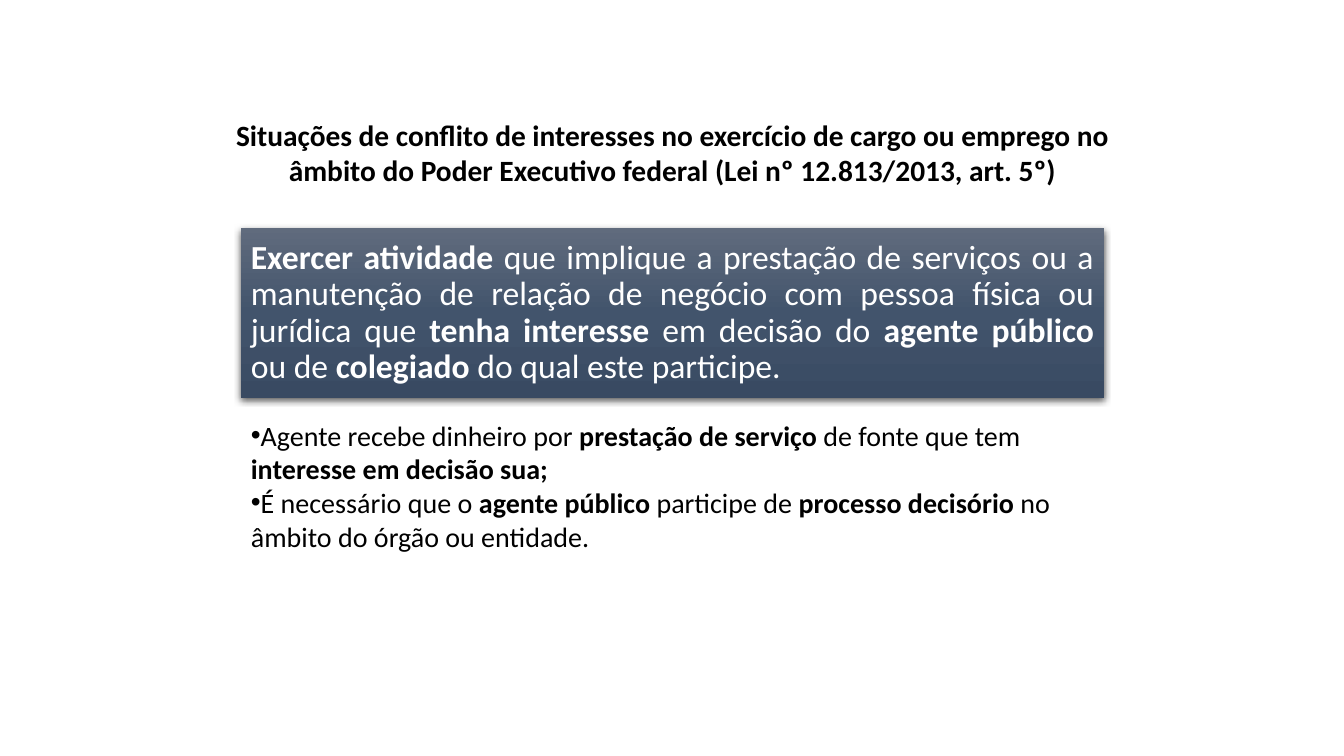
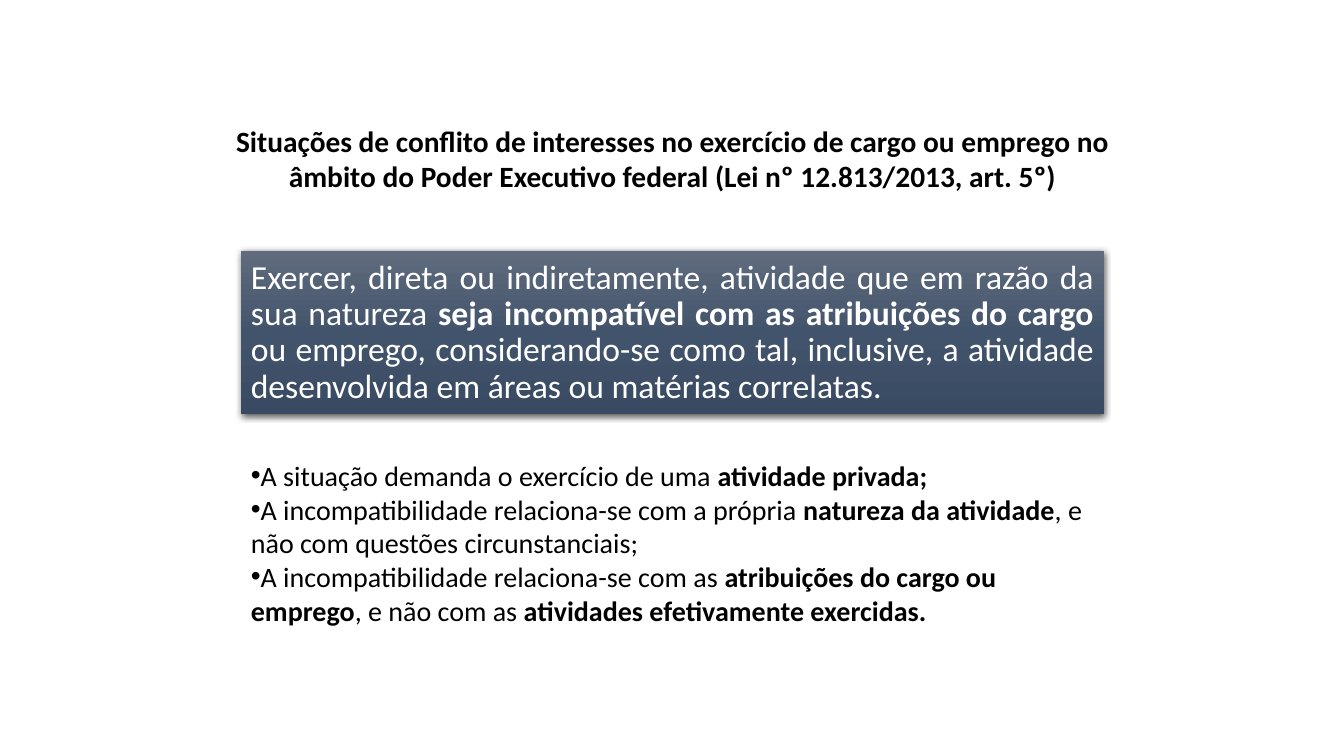
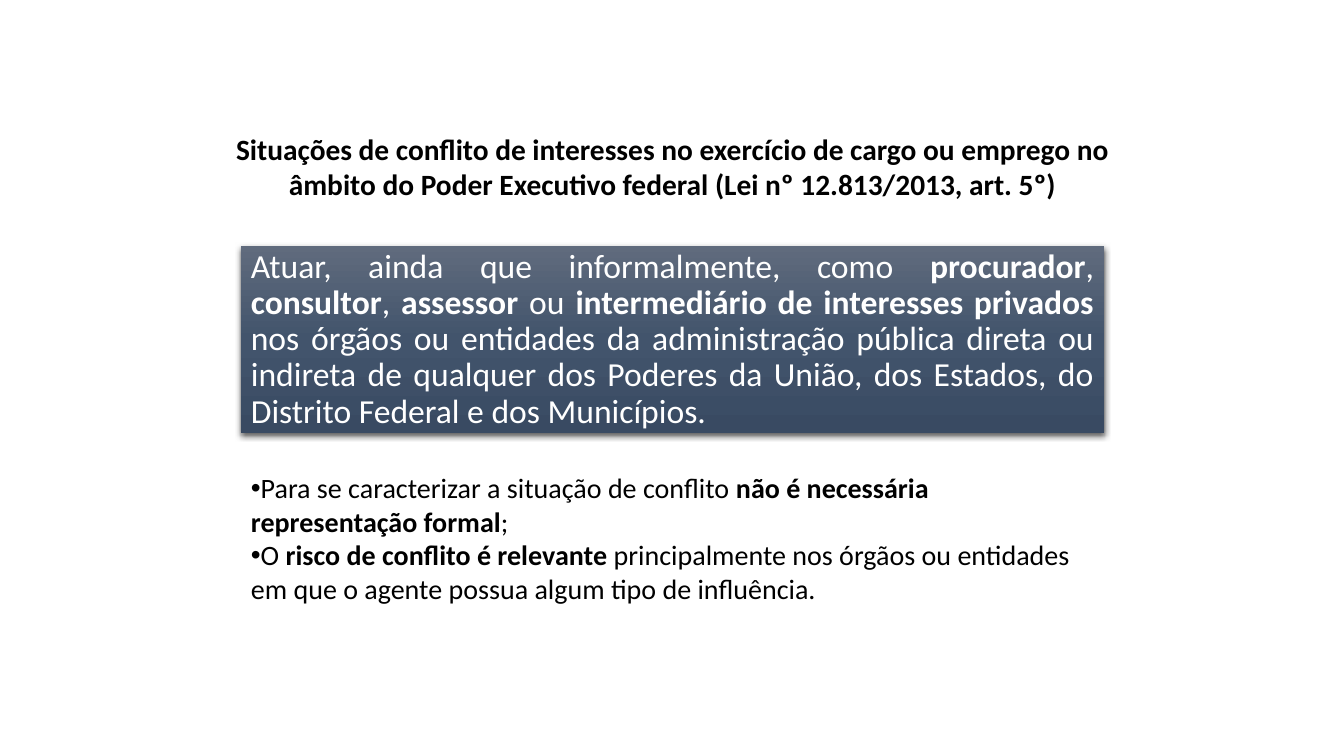
from copy import deepcopy
from dataclasses import dataclass

from lxml import etree
from pptx import Presentation
from pptx.dml.color import RGBColor
from pptx.enum.shapes import MSO_SHAPE
from pptx.enum.text import MSO_ANCHOR, MSO_AUTO_SIZE, PP_ALIGN
from pptx.oxml.ns import qn
from pptx.util import Inches, Pt

RECTANGLE = MSO_SHAPE.RECTANGLE
MIDDLE, TOP = MSO_ANCHOR.MIDDLE, MSO_ANCHOR.TOP
FIXED, GROW = MSO_AUTO_SIZE.NONE, MSO_AUTO_SIZE.SHAPE_TO_FIT_TEXT
CENTER, JUSTIFY, LEFT = PP_ALIGN.CENTER, PP_ALIGN.JUSTIFY, PP_ALIGN.LEFT
TITLE_ONLY = 5


@dataclass(frozen=True)
class Theme:
    """Colours, type sizes and lengths shared by the slides."""

    font: str = "Calibri"
    ink: str = "000000"
    light: str = "FFFFFF"
    gradient: tuple = ("606B7D", "42546C", "394A62")
    title_size: int = 21
    rule_size: int = 24
    note_size: int = 20
    title_left: float = 2.24
    title_width: float = 8.86
    title_height: float = 0.68
    left: float = 2.39
    width: float = 8.56
    bullet_indent: float = -0.31


THEME = Theme()
TITLE = (
    "Situações de conflito de interesses no exercício de cargo ou emprego no "
    "âmbito do Poder Executivo federal (Lei nº 12.813/2013, art. 5º)"
)
SITUATIONS = [
    {
        "title_top": 1.17,
        "rule_span": (2.26, 1.69),
        "notes_span": (4.1, 1.45),
        "rule": "**Exercer atividade** que implique a prestação de serviços ou a "
        "manutenção de relação de negócio com pessoa física ou jurídica que "
        "**tenha interesse** em decisão do **agente público** ou de "
        "**colegiado** do qual este participe.",
        "notes": [
            "Agente recebe dinheiro por **prestação de serviço** de fonte que tem "
            "**interesse em decisão sua;**",
            "É necessário que o **agente público **participe de "
            "**processo decisório** no âmbito do órgão ou entidade.",
        ],
    },
    {
        "title_top": 1.23,
        "rule_span": (2.49, 1.62),
        "notes_span": (4.5, 1.78),
        "rule": "Exercer, direta ou indiretamente, atividade que em razão da sua "
        "natureza **seja incompatível com as atribuições do cargo **ou emprego, "
        "considerando-se como tal, inclusive, a atividade desenvolvida em áreas "
        "ou matérias correlatas.",
        "notes": [
            "A situação demanda o exercício de uma **atividade privada;**",
            "A incompatibilidade relaciona-se com a própria "
            "**natureza da atividade**, e não com questões circunstanciais;",
            "A incompatibilidade relaciona-se com as "
            "**atribuições do cargo ou emprego**, e não com as "
            "**atividades efetivamente exercidas.**",
        ],
    },
    {
        "title_top": 1.31,
        "rule_span": (2.44, 1.86),
        "notes_span": (4.62, 1.45),
        "rule": "Atuar, ainda que informalmente, como **procurador**, "
        "**consultor**, **assessor** ou **intermediário de interesses privados** "
        "nos órgãos ou entidades da administração pública direta ou indireta de "
        "qualquer dos Poderes da União, dos Estados, do Distrito Federal e dos "
        "Municípios.",
        "notes": [
            "Para se caracterizar a situação de conflito "
            "**não é necessária representação formal**;",
            "O **risco de conflito é relevante **principalmente nos órgãos ou "
            "entidades em que o agente possua algum tipo de influência.",
        ],
    },
]


def apply_format(target, values):
    """Set each named attribute of the target."""
    for name, value in values.items():
        setattr(target, name, value)


def format_frame(frame, anchor, auto_size, inset_x, inset_y):
    """Set wrapping, anchoring and insets of a text frame."""
    apply_format(frame, {
        "word_wrap": True,
        "auto_size": auto_size,
        "vertical_anchor": anchor,
        "margin_left": Inches(inset_x),
        "margin_right": Inches(inset_x),
        "margin_top": Inches(inset_y),
        "margin_bottom": Inches(inset_y),
    })


def write_paragraph(paragraph, marked, size, color, alignment, spacing=1.0):
    """Write text into a paragraph, with ** around its bold parts."""
    apply_format(paragraph, {"alignment": alignment, "line_spacing": spacing})
    for index, words in enumerate(marked.split("**")):
        if words:
            run = paragraph.add_run()
            run.text = words
            apply_format(run.font, {
                "name": THEME.font, "size": Pt(size), "bold": index % 2 == 1,
            })
            run.font.color.rgb = RGBColor.from_string(color)


def add_bullet(paragraph):
    """Give a paragraph a hanging bullet."""
    properties = paragraph._p.get_or_add_pPr()
    properties.set("marL", "0")
    properties.set("indent", str(Inches(THEME.bullet_indent)))
    etree.SubElement(properties, qn("a:buFont"), typeface="Arial")
    etree.SubElement(properties, qn("a:buChar"), char="•")


def shade_panel(panel):
    """Fill a panel with the theme gradient and drop a soft shadow below it."""
    panel.fill.gradient()
    panel.fill.gradient_angle = 270
    properties = panel._element.spPr
    stop_list = properties.find(".//" + qn("a:gsLst"))
    stop_list.append(deepcopy(stop_list[0]))
    for index, (stop, color) in enumerate(
        zip(panel.fill.gradient_stops, THEME.gradient)
    ):
        stop.position = index / (len(THEME.gradient) - 1)
        stop.color.rgb = RGBColor.from_string(color)
    panel.line.fill.background()
    panel.shadow.inherit = False
    shadow = etree.SubElement(
        properties.find(qn("a:effectLst")), qn("a:outerShdw"),
        blurRad=str(Pt(4.5)), dist=str(Pt(1.5)), dir="5400000",
        algn="ctr", rotWithShape="0",
    )
    shade = etree.SubElement(shadow, qn("a:srgbClr"), val=THEME.ink)
    etree.SubElement(shade, qn("a:alpha"), val="63000")


def place_title(slide, left, top, width, height):
    """Place the shared heading in the title placeholder."""
    title = slide.shapes.title
    apply_format(title, {
        "left": Inches(left), "top": Inches(top),
        "width": Inches(width), "height": Inches(height),
    })
    format_frame(title.text_frame, MIDDLE, FIXED, 0.07, 0.04)
    write_paragraph(title.text_frame.paragraphs[0], f"**{TITLE}**",
                    THEME.title_size, THEME.ink, CENTER)


def add_rule_panel(slide, rule, left, top, width, height):
    """Add the shaded panel that quotes the rule."""
    panel = slide.shapes.add_shape(
        RECTANGLE, Inches(left), Inches(top), Inches(width), Inches(height))
    shade_panel(panel)
    format_frame(panel.text_frame, MIDDLE, FIXED, 0.1, 0.1)
    write_paragraph(panel.text_frame.paragraphs[0], rule,
                    THEME.rule_size, THEME.light, JUSTIFY, 0.9)


def add_notes(slide, notes, left, top, width, height):
    """Add the bulleted remarks on the rule."""
    remarks = slide.shapes.add_textbox(
        Inches(left), Inches(top), Inches(width), Inches(height))
    frame = remarks.text_frame
    format_frame(frame, TOP, GROW, 0.1, 0.05)
    for index, note in enumerate(notes):
        paragraph = frame.add_paragraph() if index else frame.paragraphs[0]
        add_bullet(paragraph)
        write_paragraph(paragraph, note, THEME.note_size, THEME.ink, LEFT)


def add_situation_slide(deck, situation):
    """Add one slide with heading, rule and remarks."""
    slide = deck.slides.add_slide(deck.slide_layouts[TITLE_ONLY])
    place_title(slide, THEME.title_left, situation["title_top"],
                THEME.title_width, THEME.title_height)
    for add_part, part in ((add_rule_panel, "rule"), (add_notes, "notes")):
        top, height = situation[f"{part}_span"]
        add_part(slide, situation[part], THEME.left, top, THEME.width, height)


def main():
    """Build and save the deck."""
    deck = Presentation()
    apply_format(deck, {"slide_width": Inches(13.33), "slide_height": Inches(7.5)})
    for situation in SITUATIONS:
        add_situation_slide(deck, situation)
    deck.save("out.pptx")


if __name__ == "__main__":
    main()
